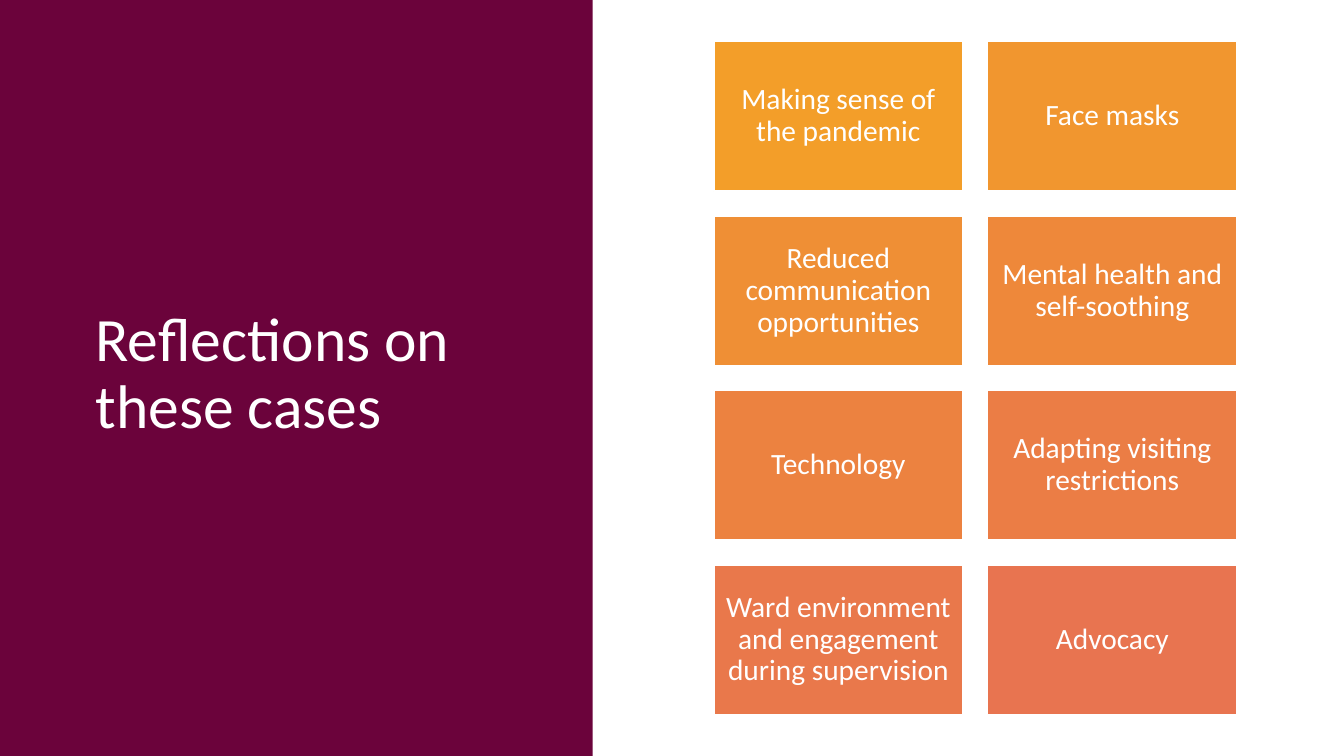
from dataclasses import dataclass

from pptx import Presentation
from pptx import util as u
from pptx.dml.color import RGBColor
from pptx.enum import shapes, text


@dataclass(frozen=True)
class Theme:
    font: str = "Calibri"
    title_size: float = 44
    tile_size: float = 21
    white: str = "FFFFFF"
    panel: str = "6B033B"


@dataclass(frozen=True)
class Box:
    left: float
    top: float
    width: float
    height: float

    def lengths(self) -> list[u.Length]:
        return [u.Pt(v) for v in (self.left, self.top, self.width, self.height)]


@dataclass(frozen=True)
class Topic:
    label: str
    fill: str


THEME = Theme()
SLIDE_WIDTH, SLIDE_HEIGHT = 960, 540
PANEL = Box(0, 0, 423.4, SLIDE_HEIGHT)
TITLE = Box(61.2, 38.9, 311, 458)

COLUMNS = 2
GRID_LEFT, GRID_TOP = 509.9, 29.7
TILE_WIDTH, TILE_HEIGHT, TILE_GAP = 177.9, 106.8, 17.8

TOPICS = [
    Topic("Making sense of the pandemic", "F39E29"),
    Topic("Face masks", "F1962F"),
    Topic("Reduced communication opportunities", "EF8F35"),
    Topic("Mental health and self-soothing", "EE883A"),
    Topic("Technology", "EC8240"),
    Topic("Adapting visiting restrictions", "EB7D45"),
    Topic("Ward environment and engagement during supervision", "E9784B"),
    Topic("Advocacy", "E87450"),
]


def rgb(code: str) -> RGBColor:
    return RGBColor.from_string(code)


def add_block(slide, box: Box, fill: str):
    block = slide.shapes.add_shape(shapes.MSO_SHAPE.RECTANGLE, *box.lengths())
    block.shadow.inherit = False
    block.fill.solid()
    block.fill.fore_color.rgb = rgb(fill)
    block.line.fill.background()
    return block


def write(shape, words: str, size: float, align: text.PP_ALIGN, inset: float) -> None:
    frame = shape.text_frame
    frame_format = {
        "word_wrap": True,
        "vertical_anchor": text.MSO_ANCHOR.MIDDLE,
        **{f"margin_{side}": u.Pt(inset) for side in ("left", "top", "right", "bottom")},
    }
    paragraph = frame.paragraphs[0]
    run = paragraph.add_run()
    run.text = words
    formats = [
        (frame, frame_format),
        (paragraph, {"alignment": align, "line_spacing": 0.9}),
        (run.font, {"name": THEME.font, "size": u.Pt(size)}),
    ]
    for target, values in formats:
        for attribute, value in values.items():
            setattr(target, attribute, value)
    run.font.color.rgb = rgb(THEME.white)


def add_topic(slide, index: int, topic: Topic) -> None:
    row, column = divmod(index, COLUMNS)
    box = Box(
        GRID_LEFT + column * (TILE_WIDTH + TILE_GAP),
        GRID_TOP + row * (TILE_HEIGHT + TILE_GAP),
        TILE_WIDTH,
        TILE_HEIGHT,
    )
    tile = add_block(slide, box, topic.fill)
    tile.line.color.rgb = rgb(THEME.white)
    tile.line.width = u.Pt(1)
    write(tile, topic.label, THEME.tile_size, text.PP_ALIGN.CENTER, 6.3)


def main() -> None:
    deck = Presentation()
    deck.slide_width, deck.slide_height = u.Pt(SLIDE_WIDTH), u.Pt(SLIDE_HEIGHT)
    slide = deck.slides.add_slide(deck.slide_layouts[6])

    add_block(slide, PANEL, THEME.panel)
    title = slide.shapes.add_textbox(*TITLE.lengths())
    write(title, "Reflections on these cases", THEME.title_size, text.PP_ALIGN.LEFT, 7.2)

    for index, topic in enumerate(TOPICS):
        add_topic(slide, index, topic)

    deck.save("out.pptx")


if __name__ == "__main__":
    main()
